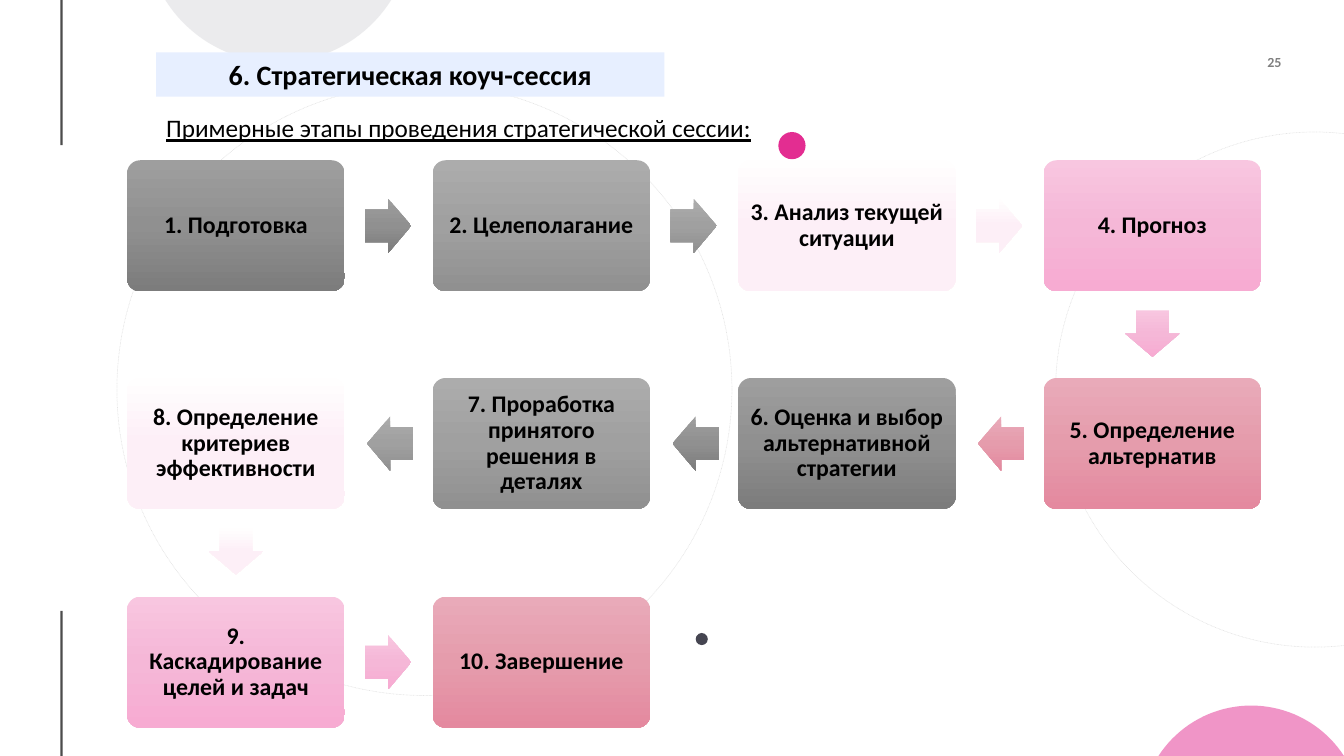
import copy
import math

from lxml import etree
from pptx import Presentation
from pptx import util as u
from pptx.dml.color import RGBColor
from pptx.enum import dml, shapes, text
from pptx.oxml.ns import qn

# Content
TITLE = "6. Стратегическая коуч-сессия"
SUBTITLE = "Примерные этапы проведения стратегической сессии:"
PAGE_NUMBER = "25"
STEPS = [
    "1. Подготовка",
    "2. Целеполагание",
    "3. Анализ текущей ситуации",
    "4. Прогноз",
    "5. Определение альтернатив",
    "6. Оценка и выбор альтернативной стратегии",
    "7. Проработка принятого решения в деталях",
    "8. Определение критериев эффективности",
    "9. Каскадирование целей и задач",
    "10. Завершение",
]

# Style
FONT = "Calibri"
COLORS = {
    "black": "000000", "pink": "E32D91", "slate": "454551",
    "mist": "D8D9DC", "title": "E7EFFF",
}
GRADIENTS = [  # repeated along the chain of steps
    ("9E9E9E", "909090", "7C7C7C"),
    ("ACACAC", "A0A0A0", "909090"),
    ("FFFEFE", "FDEFF7", "FDEDF6"),
    ("F8C6E0", "F5B7D7", "F7ABD2"),
    ("E9AAB9", "E59CAC", "E4899F"),
]

# Geometry in px, 100 to the inch
PX = 9144
SLIDE = (1333, 750)
COLUMNS, LEFT, COLUMN_PITCH = 4, 126, 303
ROW_TOPS = (159, 375, 592)
BOX = (216, 130)
ARROW = (46, 54)
ARROW_CENTERS = {0: (259, 65), 180: (-42, 65), 90: (108, 172)}  # by rotation
SIDE_LINES = [(0, 144), (606, 750)]
RINGS = [(1047, 131, 514, 511), (116, 83, 610, 607)]
DOTS = [(690, 628, 12, "slate"), (772, 131, 27, "pink")]
CAPS = [(1241, 750, 92, -50, "pink"), (276, 0, 112, 62, "mist")]

presentation = Presentation()
presentation.slide_width, presentation.slide_height = (u.Emu(v * PX) for v in SLIDE)
slide = presentation.slides.add_slide(presentation.slide_layouts[6])


def emu(*lengths):
    return [u.Emu(round(length * PX)) for length in lengths]


def rgb(name):
    return RGBColor.from_string(COLORS.get(name, name))


def set_alpha(element, percent):
    color = next(element.iter(qn("a:srgbClr")))
    etree.SubElement(color, qn("a:alpha")).set("val", str(percent * 1000))


def add_shape(kind, left, top, width, height, fill=None):
    shape = slide.shapes.add_shape(kind, *emu(left, top, width, height))
    shape.shadow.inherit = False
    shape.line.fill.background()
    if fill:
        shape.fill.solid()
        shape.fill.fore_color.rgb = rgb(fill)
    else:
        shape.fill.background()
    return shape


def add_textbox(left, top, width, height):
    return slide.shapes.add_textbox(*emu(left, top, width, height))


def write(shape, words, size, align, bold=True, margin=None,
          anchor=text.MSO_ANCHOR.MIDDLE):
    frame = shape.text_frame
    frame.word_wrap = True
    frame.vertical_anchor = anchor
    if margin is not None:
        frame.margin_left, frame.margin_top = emu(margin, margin)
        frame.margin_right, frame.margin_bottom = emu(margin, margin)
    frame.text = words
    paragraph = frame.paragraphs[0]
    paragraph.alignment = align
    font = paragraph.runs[0].font
    font.name, font.size, font.bold = FONT, u.Pt(size), bold
    font.color.rgb = rgb("black")
    return paragraph


def set_gradient(shape, colors):
    shape.fill.gradient()
    shape.fill.gradient_angle = 270
    gradient = shape._element.spPr.find(qn("a:gradFill"))
    gradient.set("rotWithShape", "0")
    stop_list = gradient.find(qn("a:gsLst"))
    stop_list.insert(1, copy.deepcopy(stop_list[0]))
    for stop, color, position in zip(shape.fill.gradient_stops, colors, (0, 0.5, 1)):
        stop.color.rgb = rgb(color)
        stop.position = position


def add_side_line(start, end):
    line = slide.shapes.add_connector(
        shapes.MSO_CONNECTOR.STRAIGHT, *emu(61, start, 61, end))
    line.line.width = u.Pt(1.5)
    line.line.color.rgb = rgb("black")
    set_alpha(line._element.spPr, 70)
    etree.SubElement(line._element.spPr, qn("a:effectLst"))


def add_cap(center, base, half_chord, rise, color):
    """Circle segment standing on (or hanging from) a slide edge."""
    height = abs(rise)
    radius = (half_chord ** 2 + height ** 2) / (2 * height)
    reach = math.asin(half_chord / radius)
    points = []
    for i in range(41):
        angle = reach * (i / 20 - 1)
        lift = radius * (math.cos(angle) - math.cos(reach))
        points.append(emu(center + radius * math.sin(angle),
                          base + math.copysign(lift, rise)))
    builder = slide.shapes.build_freeform(*points[0])
    builder.add_line_segments(points[1:], close=True)
    shape = builder.convert_to_shape()
    shape.shadow.inherit = False
    shape.line.fill.background()
    shape.fill.solid()
    shape.fill.fore_color.rgb = rgb(color)
    set_alpha(shape._element.spPr, 50)


def cell(index):
    row, place = divmod(index, COLUMNS)
    column = COLUMNS - 1 - place if row % 2 else place
    return LEFT + column * COLUMN_PITCH, ROW_TOPS[row]


# Background decoration
for span in SIDE_LINES:
    add_side_line(*span)
for ring in RINGS:
    circle = add_shape(shapes.MSO_SHAPE.OVAL, *ring)
    circle.line.width = u.Pt(0.5)
    circle.line.color.rgb = rgb("black")
    circle.line.dash_style = dml.MSO_LINE.ROUND_DOT
    set_alpha(circle._element.spPr, 10)
for left, top, size, color in DOTS:
    add_shape(shapes.MSO_SHAPE.OVAL, left, top, size, size, color)
for cap in CAPS:
    add_cap(*cap)

# Page number
number = write(add_textbox(1194, 48, 77, 27), PAGE_NUMBER, 10,
               text.PP_ALIGN.RIGHT, margin=0)
set_alpha(number.runs[0]._r, 50)

# Headings
write(add_shape(shapes.MSO_SHAPE.RECTANGLE, 155, 52, 504, 44, "title"),
      TITLE, 20, text.PP_ALIGN.CENTER)
subtitle = write(add_textbox(155, 107, 772, 40), SUBTITLE, 18, text.PP_ALIGN.LEFT,
                 bold=False, anchor=text.MSO_ANCHOR.TOP)
subtitle.runs[0].font.underline = True

# Snaking chain of steps
for index, step in enumerate(STEPS):
    left, top = cell(index)
    colors = GRADIENTS[index % len(GRADIENTS)]
    box = add_shape(shapes.MSO_SHAPE.ROUNDED_RECTANGLE, left, top, *BOX)
    box.adjustments[0] = 0.1
    set_gradient(box, colors)
    write(box, step, 17, text.PP_ALIGN.CENTER, margin=7).line_spacing = 0.9
    if index + 1 < len(STEPS):
        next_left, next_top = cell(index + 1)
        rotation = 90 if next_top > top else 0 if next_left > left else 180
        x, y = ARROW_CENTERS[rotation]
        arrow = add_shape(shapes.MSO_SHAPE.RIGHT_ARROW, left + x - ARROW[0] / 2,
                          top + y - ARROW[1] / 2, *ARROW)
        arrow.adjustments[0], arrow.adjustments[1] = 0.6, 0.5
        arrow.rotation = rotation
        set_gradient(arrow, colors)

presentation.save("out.pptx")
